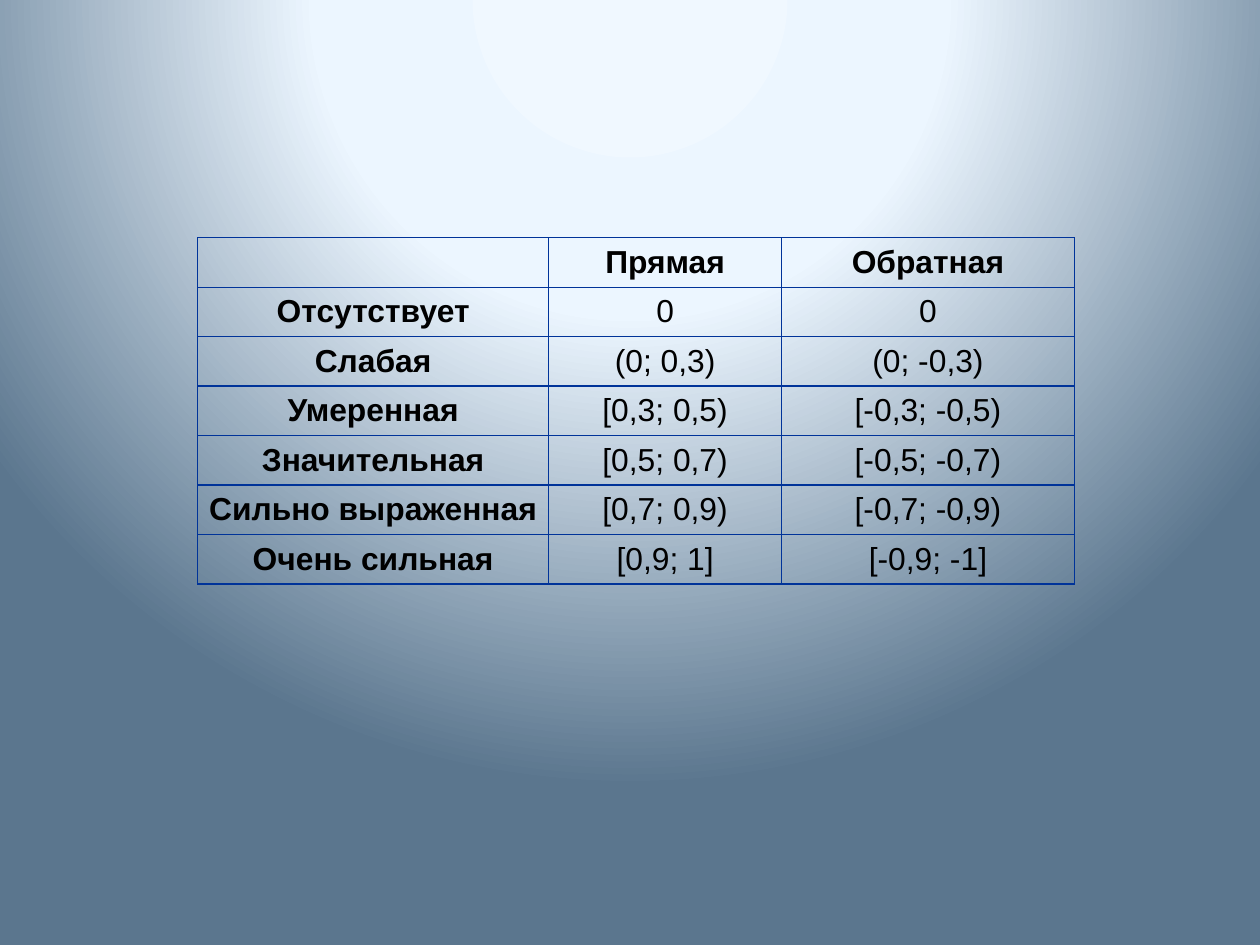
from pptx import Presentation
from pptx.dml.color import RGBColor
from pptx.enum.text import MSO_ANCHOR, PP_ALIGN
from pptx.oxml import parse_xml
from pptx.oxml.ns import nsdecls, qn
from pptx.util import Inches, Pt

ROWS = [
    ("", "Прямая", "Обратная"),
    ("Отсутствует", "0", "0"),
    ("Слабая", "(0; 0,3)", "(0; -0,3)"),
    ("Умеренная", "[0,3; 0,5)", "[-0,3; -0,5)"),
    ("Значительная", "[0,5; 0,7)", "[-0,5; -0,7)"),
    ("Сильно выраженная", "[0,7; 0,9)", "[-0,7; -0,9)"),
    ("Очень сильная", "[0,9; 1]", "[-0,9; -1]"),
]
CM_PER_INCH = 2.54
PAGE_WIDTH, PAGE_HEIGHT = 28 / CM_PER_INCH, 21 / CM_PER_INCH
COLUMN_WIDTHS = (3.07, 2.04, 2.56)
TABLE_LEFT, TABLE_TOP, TABLE_HEIGHT = 1.73, 2.08, 3.03
SIDE_MARGIN = 0.09
TEXT_COLOR = RGBColor(0x00, 0x00, 0x00)
BORDER_COLOR = RGBColor(0x00, 0x33, 0x99)
GLOW_STOPS = [
    (0, RGBColor(0xF0, 0xF8, 0xFF)),
    (40, RGBColor(0xEC, 0xF6, 0xFF)),
    (100, RGBColor(0x5B, 0x76, 0x8E)),
]


def set_background(page):
    """Fill the page with a circular glow centred above its top edge."""
    stops = "".join(
        f'<a:gs pos="{position * 1000}"><a:srgbClr val="{color}"/></a:gs>'
        for position, color in GLOW_STOPS
    )
    background = parse_xml(
        f'<p:bg {nsdecls("p", "a")}><p:bgPr><a:gradFill rotWithShape="1">'
        f'<a:gsLst>{stops}</a:gsLst><a:path path="circle">'
        '<a:fillToRect l="50000" t="-80000" r="50000" b="180000"/></a:path>'
        '</a:gradFill><a:effectLst/></p:bgPr></p:bg>'
    )
    page.element.find(qn("p:cSld")).insert(0, background)


def add_borders(cell):
    """Draw a one-point line on each side of the cell."""
    properties = cell._tc.get_or_add_tcPr()
    for side in ("lnL", "lnR", "lnT", "lnB"):
        properties.append(parse_xml(
            f'<a:{side} {nsdecls("a")} w="{Pt(1)}"><a:solidFill>'
            f'<a:srgbClr val="{BORDER_COLOR}"/></a:solidFill></a:{side}>'
        ))


def format_cell(cell, text, bold):
    """Write centred text into a bordered cell without fill."""
    add_borders(cell)
    cell.fill.background()
    cell.vertical_anchor = MSO_ANCHOR.MIDDLE
    cell.margin_left = cell.margin_right = Inches(SIDE_MARGIN)
    cell.text_frame.text = text
    para = cell.text_frame.paragraphs[0]
    para.alignment = PP_ALIGN.CENTER
    for span in para.runs:
        span.font.name = "Arial"
        span.font.size = Pt(20)
        span.font.bold = bold
        span.font.color.rgb = TEXT_COLOR


def add_correlation_table(page):
    """Add the table of correlation strengths."""
    table = page.shapes.add_table(
        len(ROWS), len(COLUMN_WIDTHS), Inches(TABLE_LEFT), Inches(TABLE_TOP),
        Inches(sum(COLUMN_WIDTHS)), Inches(TABLE_HEIGHT),
    ).table
    table.first_row = False
    table.horz_banding = False
    for column, width in zip(table.columns, COLUMN_WIDTHS):
        column.width = Inches(width)
    for row_index, row in enumerate(ROWS):
        for column_index, text in enumerate(row):
            is_heading = row_index == 0 or column_index == 0
            format_cell(table.cell(row_index, column_index), text, is_heading)


def main():
    """Build the slide and save the deck."""
    deck = Presentation()
    deck.slide_width, deck.slide_height = Inches(PAGE_WIDTH), Inches(PAGE_HEIGHT)
    page = deck.slides.add_slide(deck.slide_layouts[6])
    set_background(page)
    add_correlation_table(page)
    deck.save("out.pptx")


if __name__ == "__main__":
    main()
